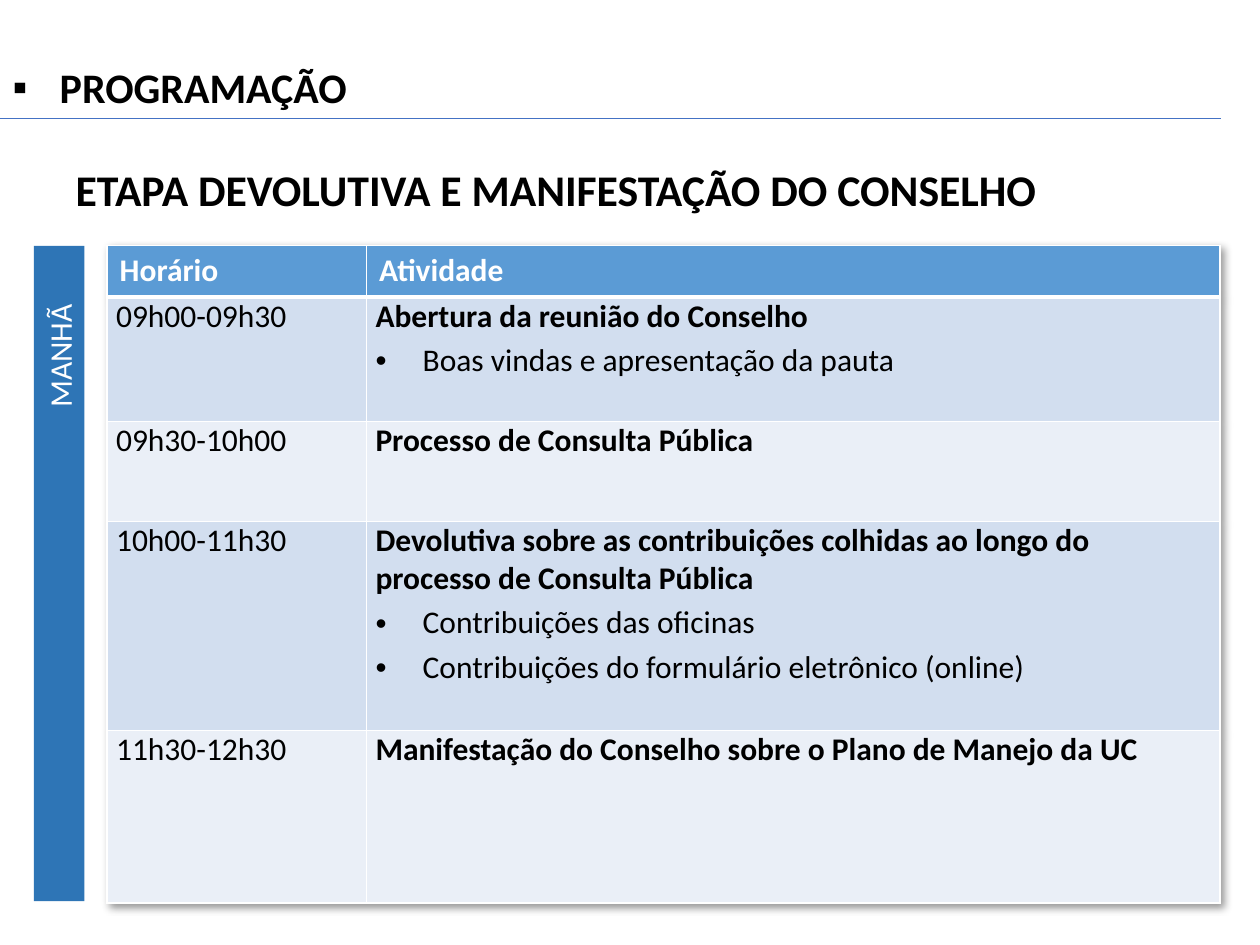
import pptx
import pptx.util
import pptx.dml.color
import pptx.enum.shapes
import pptx.enum.text
import pptx.oxml
import pptx.oxml.ns
import lxml.etree

Cm, Pt = pptx.util.Cm, pptx.util.Pt
ANCHOR = pptx.enum.text.MSO_ANCHOR
WHITE, BLACK = "FFFFFF", "000000"
HEAD, BANDS = "5B9BD5", ("D2DEEF", "EAEFF7")

ROWS = [
    (2.51, "09h00-09h30", "Abertura da reunião do Conselho",
     ["Boas vindas e apresentação da pauta"]),
    (2.01, "09h30-10h00", "Processo de Consulta Pública", []),
    (4.22, "10h00-11h30",
     "Devolutiva sobre as contribuições colhidas ao longo do "
     "processo de Consulta Pública",
     ["Contribuições das oficinas",
      "Contribuições do formulário eletrônico (online)"]),
    (3.48, "11h30-12h30",
     "Manifestação do Conselho sobre o Plano de Manejo da UC", []),
]


def color(code):
    return pptx.dml.color.RGBColor.from_string(code)


def paint(fill, code):
    fill.solid()
    fill.fore_color.rgb = color(code)


def node(parent, tag, **attrs):
    return lxml.etree.SubElement(parent, pptx.oxml.ns.qn(tag), attrs)


def place(shape, left, top, width, height):
    shape.left, shape.top = Cm(left), Cm(top)
    shape.width, shape.height = Cm(width), Cm(height)


def write(para, text, size=18, code=BLACK, bold=False):
    para.alignment = pptx.enum.text.PP_ALIGN.LEFT
    run = para.add_run()
    run.text = text
    font = run.font
    font.name, font.size, font.bold = "Calibri", Pt(size), bold
    font.color.rgb = color(code)


def indent(para, left, first=0, mark=None):
    """Set the indents, and the bullet sign if there is one."""
    props = para._p.get_or_add_pPr()
    props.set("marL", str(Cm(left)))
    props.set("indent", str(Cm(first)))
    if mark:
        node(props, "a:buFont", typeface="Arial")
        node(props, "a:buChar", char=mark)
    else:
        node(props, "a:buNone")


def fill_holder(holder, box, text, size, left=0, mark=None):
    place(holder, *box)
    frame = holder.text_frame
    frame.auto_size = pptx.enum.text.MSO_AUTO_SIZE.NONE
    frame.vertical_anchor = ANCHOR.TOP
    para = frame.paragraphs[0]
    indent(para, left, -left, mark)
    write(para, text, size, bold=True)


def add_rule(slide):
    rule = slide.shapes.add_connector(
        pptx.enum.shapes.MSO_CONNECTOR.STRAIGHT,
        Cm(0), Cm(2.39), Cm(24.61), Cm(2.39))
    rule.line.color.rgb = color("4472C4")
    rule.line.width = Pt(0.5)
    node(rule._element.spPr, "a:effectLst")


def add_band(slide):
    band = slide.shapes.add_shape(
        pptx.enum.shapes.MSO_SHAPE.RECTANGLE, 0, 0, 0, 0)
    place(band, -5.41, 11.05, 13.21, 1.02)
    band.rotation = 270
    band.shadow.inherit = False
    paint(band.fill, "2E75B6")
    band.line.fill.background()
    para = band.text_frame.paragraphs[0]
    indent(para, 9.7)
    write(para, "MANHÃ", code=WHITE)


def style_cell(cell, code, top, bottom):
    """Draw the white borders, then the fill, as the schema orders them."""
    props = cell._tc.get_or_add_tcPr()
    for side, width in zip("LRTB", (1, 1, top, bottom)):
        line = node(props, "a:ln" + side, w=str(Pt(width)))
        node(node(line, "a:solidFill"), "a:srgbClr", val=WHITE)
    paint(cell.fill, code)
    cell.vertical_anchor = ANCHOR.TOP


def add_shade(table):
    effects = node(table._tbl.tblPr, "a:effectLst")
    table._tbl.tblPr.insert(0, effects)
    shade = node(effects, "a:outerShdw", blurRad=str(Pt(4)), dist=str(Pt(3)),
                 dir="2700000", algn="tl", rotWithShape="0")
    tint = node(shade, "a:srgbClr", val=BLACK)
    node(tint, "a:alpha", val="40000")


def add_times(slide):
    table = slide.shapes.add_table(
        len(ROWS) + 1, 2, Cm(2.16), Cm(4.95), Cm(22.43), Cm(13.26)).table
    add_shade(table)
    for col, width in zip(table.columns, (5.23, 17.2)):
        col.width = Cm(width)

    table.rows[0].height = Cm(1.04)
    for col, text in enumerate(("Horário", "Atividade")):
        cell = table.cell(0, col)
        style_cell(cell, HEAD, 1, 3)
        write(cell.text_frame.paragraphs[0], text, code=WHITE, bold=True)

    for row, (height, time, topic, points) in enumerate(ROWS, 1):
        table.rows[row].height = Cm(height)
        for col, text in enumerate((time, topic)):
            cell = table.cell(row, col)
            style_cell(cell, BANDS[(row - 1) % 2], 3 if row == 1 else 1, 1)
            cell.margin_left = cell.margin_right = Cm(0.18)
            cell.margin_top = cell.margin_bottom = 0
            write(cell.text_frame.paragraphs[0], text, bold=col == 1)
        for point in points:
            para = table.cell(row, 1).text_frame.add_paragraph()
            para.line_spacing = 1.15
            indent(para, 0.95, -0.95, "•")
            write(para, point)


def main():
    deck = pptx.Presentation()
    deck.slide_width, deck.slide_height = Cm(25.4), Cm(19.05)
    slide = deck.slides.add_slide(deck.slide_layouts[1])
    title, body = slide.placeholders
    fill_holder(title, (0, 1.12, 25.4, 1.27), "PROGRAMAÇÃO", 24, 0.95, "▪")
    add_rule(slide)
    fill_holder(body, (1.27, 3.15, 22.86, 14.5),
                "ETAPA DEVOLUTIVA E MANIFESTAÇÃO DO CONSELHO", 25)
    add_times(slide)
    add_band(slide)
    deck.save("out.pptx")


if __name__ == "__main__":
    main()
